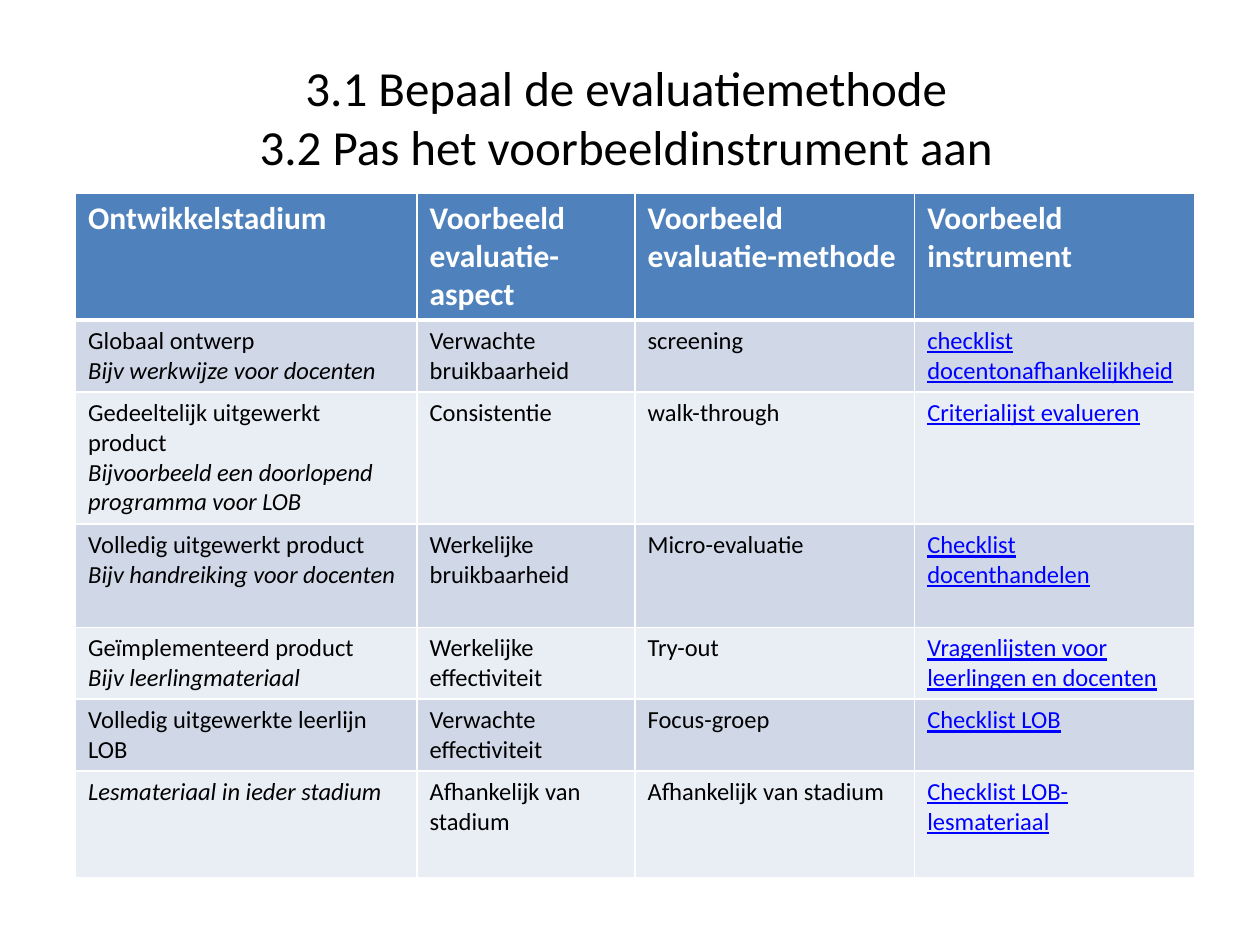
from lxml import etree
from pptx import Presentation
from pptx.dml.color import RGBColor
from pptx.enum.text import MSO_ANCHOR, PP_ALIGN
from pptx.oxml.ns import qn
from pptx.util import Inches, Pt

CENTER = PP_ALIGN.CENTER
MIDDLE = MSO_ANCHOR.MIDDLE
BLACK = RGBColor(0x00, 0x00, 0x00)
WHITE = RGBColor(0xFF, 0xFF, 0xFF)
LINK_BLUE = RGBColor(0x00, 0x00, 0xFF)
HEADER_BLUE = RGBColor(0x4F, 0x81, 0xBD)
BANDS = (RGBColor(0xD0, 0xD8, 0xE8), RGBColor(0xE9, 0xED, 0xF4))
FONT = "Calibri"

TITLE = ("3.1 Bepaal de evaluatiemethode", "3.2 Pas het voorbeeldinstrument aan")
HEADINGS = (
    ("Ontwikkelstadium",),
    ("Voorbeeld evaluatie-aspect",),
    ("Voorbeeld evaluatie-methode",),
    ("Voorbeeld", "instrument"),
)
STAGES = (
    ("Globaal ontwerp", "Bijv werkwijze voor docenten",
     "Verwachte bruikbaarheid", "screening", "checklist docentonafhankelijkheid"),
    ("Gedeeltelijk uitgewerkt product", "Bijvoorbeeld een doorlopend programma voor LOB",
     "Consistentie", "walk-through", "Criterialijst evalueren"),
    ("Volledig uitgewerkt product", "Bijv handreiking voor docenten",
     "Werkelijke bruikbaarheid", "Micro-evaluatie", "Checklist docenthandelen"),
    ("Geïmplementeerd product", "Bijv leerlingmateriaal",
     "Werkelijke effectiviteit", "Try-out", "Vragenlijsten voor leerlingen en docenten"),
    ("Volledig uitgewerkte leerlijn LOB", "",
     "Verwachte effectiviteit", "Focus-groep", "Checklist LOB"),
    ("", "Lesmateriaal in ieder stadium",
     "Afhankelijk van stadium", "Afhankelijk van stadium", "Checklist LOB- lesmateriaal"),
)
COLUMN_WIDTHS = (2.71, 1.73, 2.22, 2.22)
ROW_HEIGHTS = (1.01, 0.57, 1.05, 0.82, 0.57, 0.57, 0.85)


def add_run(paragraph, text, size, color, bold=False, italic=False, underline=False):
    """Append one styled run to a paragraph."""
    run = paragraph.add_run()
    run.text = text
    font = run.font
    font.name, font.size, font.color.rgb = FONT, Pt(size), color
    font.bold, font.italic, font.underline = bold, italic, underline


def add_title(slide):
    """Place the centred two-line heading above the table."""
    heading = slide.shapes.add_textbox(Inches(0.47), Inches(0.3), Inches(9), Inches(1.25))
    frame = heading.text_frame
    frame.word_wrap = True
    frame.vertical_anchor = MIDDLE
    paragraph = frame.paragraphs[0]
    paragraph.alignment = CENTER
    for number, line in enumerate(TITLE):
        if number:
            paragraph.add_line_break()
        add_run(paragraph, line, 28, BLACK)


def set_borders(cell, bottom):
    """Give a cell white borders, with its own bottom width in points."""
    properties = cell._tc.get_or_add_tcPr()
    sides = (("a:lnL", 1), ("a:lnR", 1), ("a:lnT", 1), ("a:lnB", bottom))
    for position, (side, width) in enumerate(sides):
        line = etree.Element(qn(side), w=str(Pt(width)))
        fill = etree.SubElement(line, qn("a:solidFill"))
        etree.SubElement(fill, qn("a:srgbClr"), val=str(WHITE))
        properties.insert(position, line)


def fill_cell(cell, fill, lines, bottom=1):
    """Colour a cell and write one paragraph for each (text, style) pair."""
    cell.fill.solid()
    cell.fill.fore_color.rgb = fill
    set_borders(cell, bottom)
    frame = cell.text_frame
    for number, (text, style) in enumerate(lines):
        paragraph = frame.add_paragraph() if number else frame.paragraphs[0]
        add_run(paragraph, text, **style)


def add_evaluation_table(slide):
    """Build the table of stages, aspects, methods and instruments."""
    table = slide.shapes.add_table(
        len(ROW_HEIGHTS), len(COLUMN_WIDTHS), Inches(0.6), Inches(1.53),
        Inches(sum(COLUMN_WIDTHS)), Inches(sum(ROW_HEIGHTS))).table
    for column, width in zip(table.columns, COLUMN_WIDTHS):
        column.width = Inches(width)
    for row, height in zip(table.rows, ROW_HEIGHTS):
        row.height = Inches(height)

    header = {"size": 18, "color": WHITE, "bold": True}
    plain = {"size": 14, "color": BLACK}
    example_style = {**plain, "italic": True}
    link = {"size": 14, "color": LINK_BLUE, "underline": True}

    for column, lines in enumerate(HEADINGS):
        fill_cell(table.cell(0, column), HEADER_BLUE,
                  [(line, header) for line in lines], bottom=3)
    for row, (stage, example, aspect, method, instrument) in enumerate(STAGES, 1):
        stage_lines = [(text, style) for text, style in
                       ((stage, plain), (example, example_style)) if text]
        contents = (stage_lines, [(aspect, plain)], [(method, plain)], [(instrument, link)])
        for column, lines in enumerate(contents):
            fill_cell(table.cell(row, column), BANDS[(row - 1) % 2], lines)


def main():
    """Create the slide and save it."""
    presentation = Presentation()
    presentation.slide_width, presentation.slide_height = Inches(10), Inches(7.5)
    slide = presentation.slides.add_slide(presentation.slide_layouts[6])
    add_title(slide)
    add_evaluation_table(slide)
    presentation.save("out.pptx")


if __name__ == "__main__":
    main()
